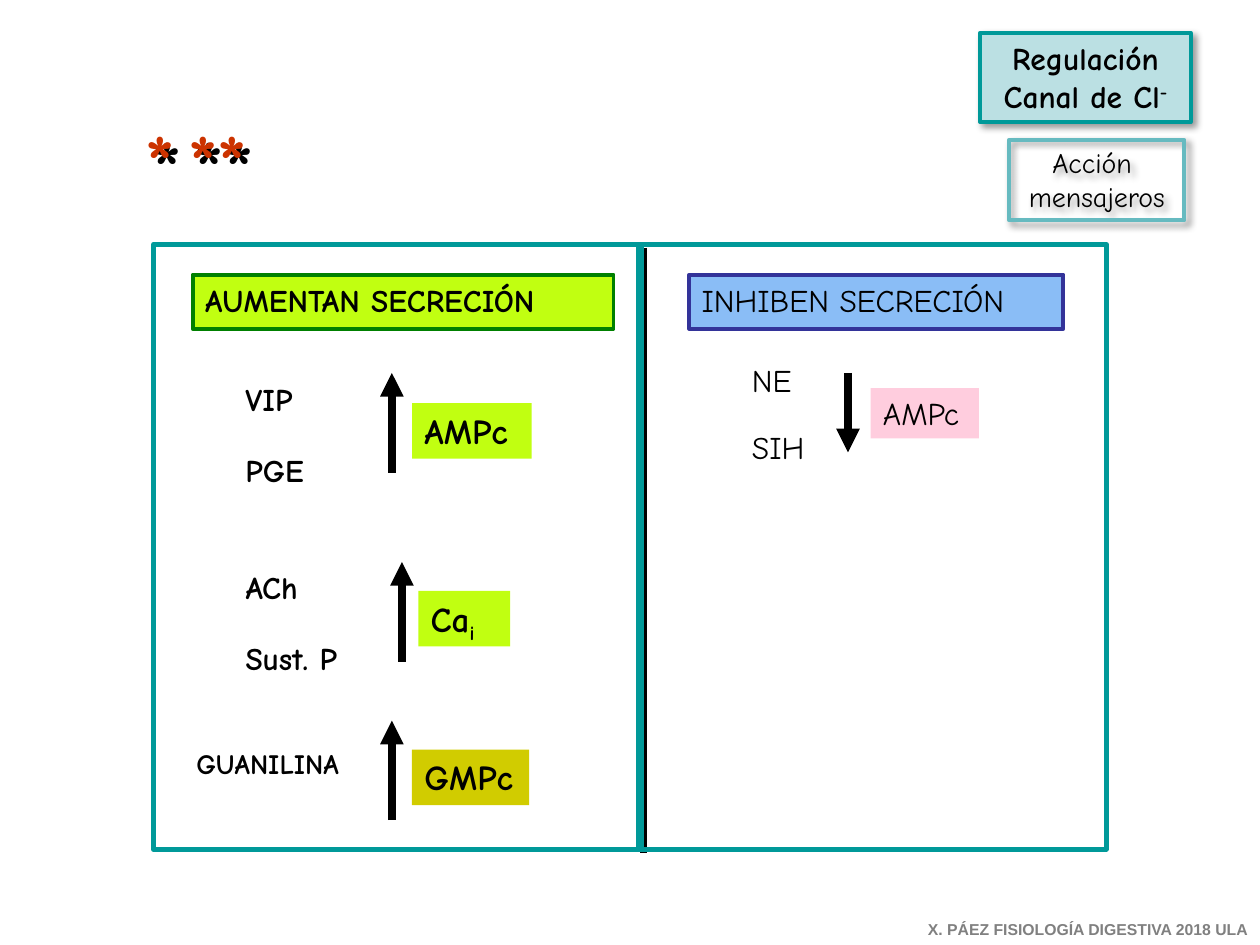
from dataclasses import dataclass

from lxml import etree
from pptx import Presentation
from pptx.dml.color import RGBColor
from pptx.enum import shapes, text
from pptx.oxml import ns
from pptx.util import Inches, Pt

COLS, ROWS = 100, 75
WIDE, HIGH = Inches(10), Inches(7.5)
FONT = "Comic Neue"
BLACK, TEAL, LIME, RED = "000000", "009999", "C1FF11", "CC3300"


@dataclass(frozen=True)
class Shade:
    alpha: int
    blur: float
    dist: float


@dataclass(frozen=True)
class Box:
    lines: tuple[str, ...]
    x: float
    y: float
    w: float
    h: float
    size: float = 18
    bold: bool = True
    fill: str = ""
    edge: str = ""
    ink: str = BLACK
    font: str = FONT
    side: str = "LEFT"
    gap: float = 0
    mark: str = ""
    base: int = 0
    wrap: bool = False
    shade: Shade | None = None


@dataclass(frozen=True)
class Line:
    x: float
    start: float
    end: float
    color: str = BLACK
    head: bool = True
    shade: Shade | None = None


SOFT = Shade(40, 4, 3)
HARD = Shade(100, 0, 2.8)
DROP = Shade(100, 0, 5)

BOXES = [
    Box(("VIP", "PGE"), 18.5, 29.7, 6.6, 9.7, gap=19),
    Box(("ACh", "Sust. P"), 18.5, 44.6, 10.9, 9.7, gap=19),
    Box(("NE", "SIH"), 58.7, 28.2, 7, 9.3, bold=False, gap=16.7),
    Box(("GUANILINA",), 14.6, 58.8, 16.7, 3.7, 16),
    Box(("AMPc",), 32.7, 32, 9.5, 4.4, 20, fill=LIME),
    Box(("Ca",), 33.2, 46.9, 7.3, 4.4, 20, fill=LIME, mark="i", base=-25, wrap=True),
    Box(("GMPc",), 32.7, 59.5, 9.3, 4.4, 20, fill="D1CC00"),
    Box(("AMPc",), 69.1, 30.8, 8.6, 4, bold=False, fill="FFCDDE"),
    Box(("AUMENTAN SECRECIÓN",), 15.3, 21.8, 33.4, 4.3, fill=LIME, edge="008000"),
    Box(("INHIBEN SECRECIÓN",), 54.7, 21.8, 29.7, 4.3, bold=False,
        fill="8ABDF6", edge="333399"),
    Box(("Regulación", "Canal de Cl"), 77.8, 2.6, 16.7, 7.1, fill="BBE0E3",
        edge=TEAL, side="CENTER", mark="-", base=30, shade=SOFT),
    Box(("Acción ", "mensajeros"), 80.1, 11.1, 13.9, 6.4, 16, False,
        edge="66BAC0", side="CENTER", shade=SOFT),
    Box(("*",), 10.6, 8.4, 5.2, 8.3, 44, ink=RED, wrap=True, shade=DROP),
    Box(("**",), 14, 8.4, 11.5, 8.3, 44, ink=RED, wrap=True, shade=DROP),
    Box(("X. PÁEZ FISIOLOGÍA DIGESTIVA 2018 ULA",), 71.4, 72.5, 28.6, 2.5, 9,
        ink="808080", font="Arial", side="RIGHT", wrap=True),
]
LINES = [
    Line(50.8, 19.4, 67.4, TEAL, False, HARD),
    Line(67.3, 29.6, 35.9),
    Line(31.1, 37.5, 29.6),
    Line(31.9, 52.5, 44.6),
    Line(31.1, 65.1, 57.2),
]


def col(n: float) -> int:
    return round(WIDE * n / COLS)


def row(n: float) -> int:
    return round(HIGH * n / ROWS)


def hue(code: str) -> RGBColor:
    return RGBColor.from_string(code)


def node(root, tag: str, **attrs):
    return etree.SubElement(root, ns.qn(tag), {k: str(v) for k, v in attrs.items()})


def cast(shape, shade: Shade | None) -> None:
    list_ = node(shape._element.spPr, "a:effectLst")
    if shade:
        drop = node(list_, "a:outerShdw", blurRad=Pt(shade.blur), dist=Pt(shade.dist),
                    dir=45 * 60000, algn="tl", rotWithShape=0)
        node(node(drop, "a:srgbClr", val=BLACK), "a:alpha", val=shade.alpha * 1000)


def paint(shape, fill: str, edge: str, width: float) -> None:
    for part, code in ((shape.fill, fill), (shape.line.fill, edge)):
        if code:
            part.solid()
            part.fore_color.rgb = hue(code)
        else:
            part.background()
    if edge:
        shape.line.width = Pt(width)


def write(frame, box: Box) -> None:
    frame.word_wrap = box.wrap
    frame.auto_size = text.MSO_AUTO_SIZE.SHAPE_TO_FIT_TEXT
    frame.vertical_anchor = text.MSO_ANCHOR.TOP
    for i, words in enumerate(box.lines):
        para = frame.add_paragraph() if i else frame.paragraphs[0]
        para.alignment = text.PP_ALIGN[box.side]
        para.space_before = Pt(box.gap if i else 0)
        para.font.name, para.font.size = box.font, Pt(box.size)
        para.font.bold = box.bold
        para.font.color.rgb = hue(box.ink)
        para.add_run().text = words
    if box.mark:
        run = para.add_run()
        run.text = box.mark
        run._r.get_or_add_rPr().set("baseline", str(box.base * 1000))


def put(slide, box: Box) -> None:
    area = col(box.x), row(box.y), col(box.w), row(box.h)
    if box.fill or box.edge:
        shape = slide.shapes.add_shape(shapes.MSO_SHAPE.RECTANGLE, *area)
    else:
        shape = slide.shapes.add_textbox(*area)
    paint(shape, box.fill, box.edge, 2.25)
    cast(shape, box.shade)
    write(shape.text_frame, box)


def rule(slide, line: Line) -> None:
    x = col(line.x)
    shape = slide.shapes.add_connector(
        shapes.MSO_CONNECTOR.STRAIGHT, x, row(line.start), x, row(line.end))
    shape.line.color.rgb = hue(line.color)
    shape.line.width = Pt(4.5)
    if line.head:
        node(shape.line._get_or_add_ln(), "a:tailEnd", type="triangle")
    cast(shape, line.shade)


def main() -> None:
    deck = Presentation()
    deck.slide_width, deck.slide_height = WIDE, HIGH
    slide = deck.slides.add_slide(deck.slide_layouts[6])
    for line in LINES:
        rule(slide, line)
    frame = slide.shapes.add_shape(
        shapes.MSO_SHAPE.RECTANGLE, col(12.2), row(19.4), col(75.6), row(48))
    paint(frame, "", TEAL, 3)
    cast(frame, None)
    for box in BOXES:
        put(slide, box)
    deck.save("out.pptx")


if __name__ == "__main__":
    main()
